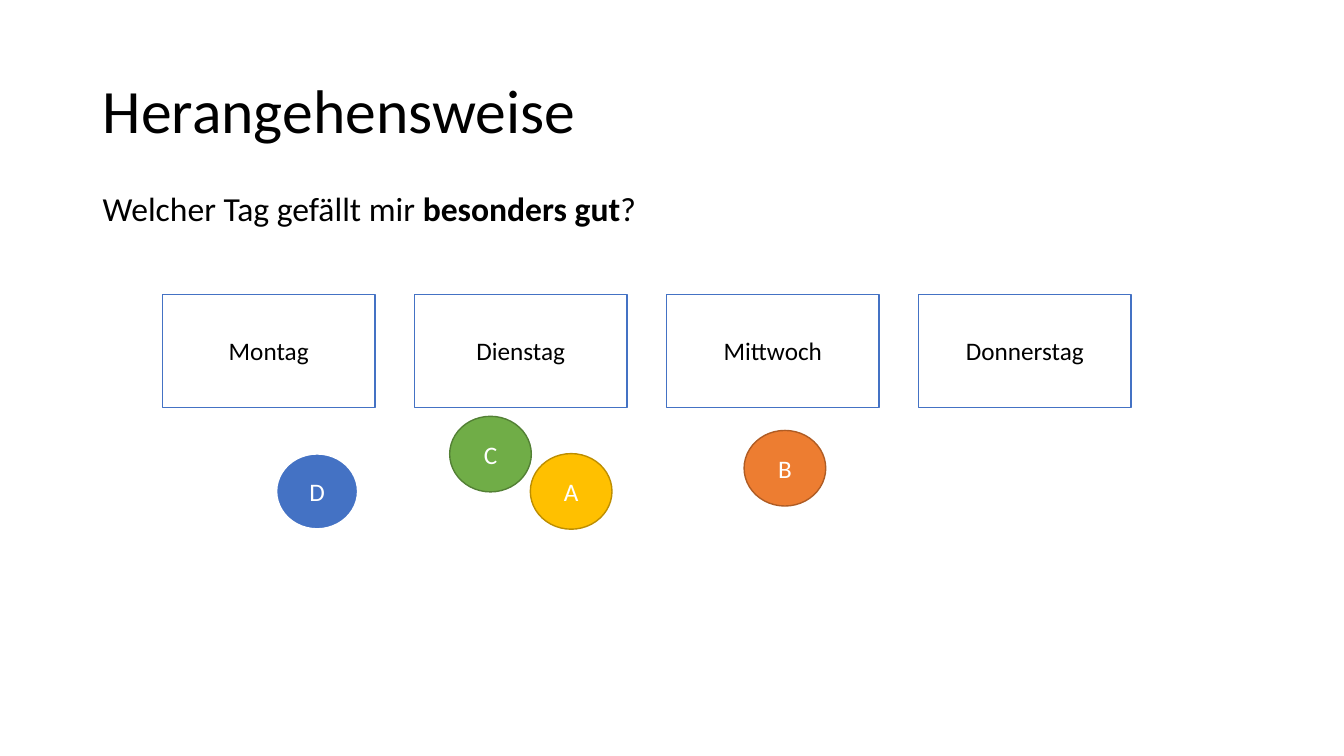
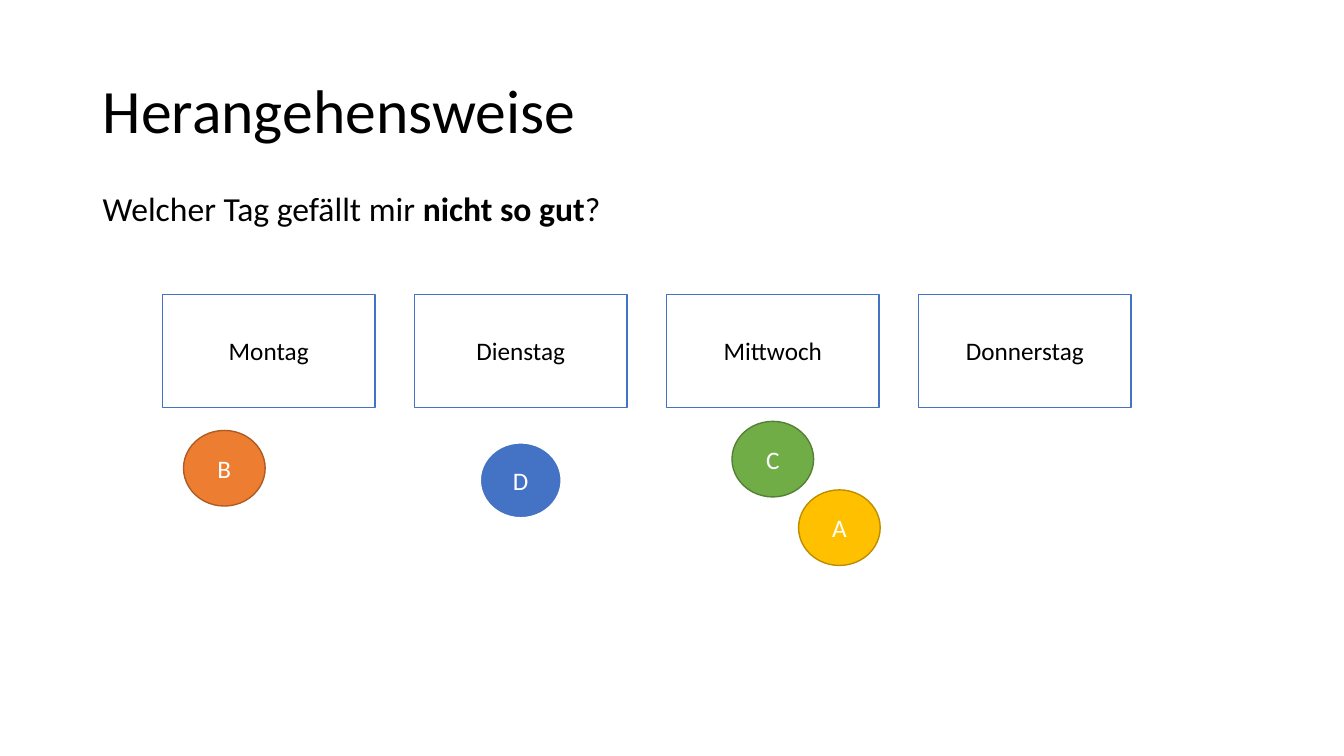
from pptx import Presentation
from pptx.dml.color import RGBColor
from pptx.enum.shapes import MSO_SHAPE
from pptx.enum.text import MSO_ANCHOR, PP_ALIGN
from pptx.util import Inches, Pt

RECT, OVAL = MSO_SHAPE.RECTANGLE, MSO_SHAPE.OVAL
LEFT, CENTER = PP_ALIGN.LEFT, PP_ALIGN.CENTER
MIDDLE = MSO_ANCHOR.MIDDLE

BLACK = RGBColor(0x00, 0x00, 0x00)
WHITE = RGBColor(0xFF, 0xFF, 0xFF)
BLUE = RGBColor(0x44, 0x72, 0xC4)
GOLD = RGBColor(0xFF, 0xC0, 0x00)
DARK_GOLD = RGBColor(0xBD, 0x8E, 0x00)
ORANGE = RGBColor(0xED, 0x7D, 0x31)
DARK_ORANGE = RGBColor(0xAF, 0x5C, 0x24)
GREEN = RGBColor(0x70, 0xAD, 0x47)
DARK_GREEN = RGBColor(0x53, 0x80, 0x35)

DAYS = ["Montag", "Dienstag", "Mittwoch", "Donnerstag"]

# Voter: fill, outline, outline width
VOTERS = {
    "A": (GOLD, DARK_GOLD, 1),
    "B": (ORANGE, DARK_ORANGE, 1),
    "C": (GREEN, DARK_GREEN, 1),
    "D": (BLUE, WHITE, 1.5),
}

# Emphasised words of the question, and the position of each vote
ROUNDS = [
    ("besonders gut",
     {"A": (5.26, 4.5), "B": (7.38, 4.27), "C": (4.46, 4.13), "D": (2.74, 4.5)}),
    ("nicht so gut",
     {"A": (7.92, 4.86), "B": (1.82, 4.27), "C": (7.26, 4.18), "D": (4.76, 4.39)}),
]


class Deck:
    """Holds the shared style and the current slide."""
    font = "Calibri"
    margin = 0.92
    content_width = 11.5

    def __init__(self):
        self.prs = Presentation()
        self.prs.slide_width = Inches(13.33)
        self.prs.slide_height = Inches(7.5)
        self.s = None

    def style(self, p, size, color, align=LEFT):
        p.alignment = align
        p.font.name = self.font
        p.font.size = Pt(size)
        p.font.color.rgb = color

    def new_slide(self, title):
        self.s = self.prs.slides.add_slide(self.prs.slide_layouts[5])
        sp = self.s.shapes.title
        sp.left, sp.top = Inches(self.margin), Inches(0.4)
        sp.width, sp.height = Inches(self.content_width), Inches(1.45)
        tf = sp.text_frame
        tf.text = title
        tf.vertical_anchor = MIDDLE
        p = tf.paragraphs[0]
        p.line_spacing = 0.9
        self.style(p, 44, BLACK)

    def question(self, start, emphasis, end):
        sp = self.s.shapes.add_textbox(
            Inches(self.margin), Inches(1.82), Inches(self.content_width), Inches(0.5))
        tf = sp.text_frame
        tf.word_wrap = True
        p = tf.paragraphs[0]
        self.style(p, 24, BLACK)
        for text, bold in ((start, False), (emphasis, True), (end, False)):
            r = p.add_run()
            r.text = text
            r.font.bold = bold

    def shape(self, kind, x, y, w, h, text, color, fill, line, line_width):
        sp = self.s.shapes.add_shape(kind, Inches(x), Inches(y), Inches(w), Inches(h))
        sp.shadow.inherit = False
        sp.fill.solid()
        sp.fill.fore_color.rgb = fill
        sp.line.color.rgb = line
        sp.line.width = Pt(line_width)
        tf = sp.text_frame
        tf.text = text
        tf.vertical_anchor = MIDDLE
        self.style(tf.paragraphs[0], 18, color, CENTER)

    def day_box(self, column, day):
        self.shape(RECT, 1.61 + 2.5 * column, 2.92, 2.11, 1.12, day, BLACK, WHITE, BLUE, 1)

    def vote(self, voter, x, y):
        self.shape(OVAL, x, y, 0.81, 0.75, voter, WHITE, *VOTERS[voter])


def main():
    deck = Deck()
    for emphasis, votes in ROUNDS:
        # Title and question
        deck.new_slide("Herangehensweise")
        deck.question("Welcher Tag gefällt mir ", emphasis, "?")
        # Days to choose from
        for column, day in enumerate(DAYS):
            deck.day_box(column, day)
        # Votes below the days
        for voter, (x, y) in votes.items():
            deck.vote(voter, x, y)
    deck.prs.save("out.pptx")


if __name__ == "__main__":
    main()
